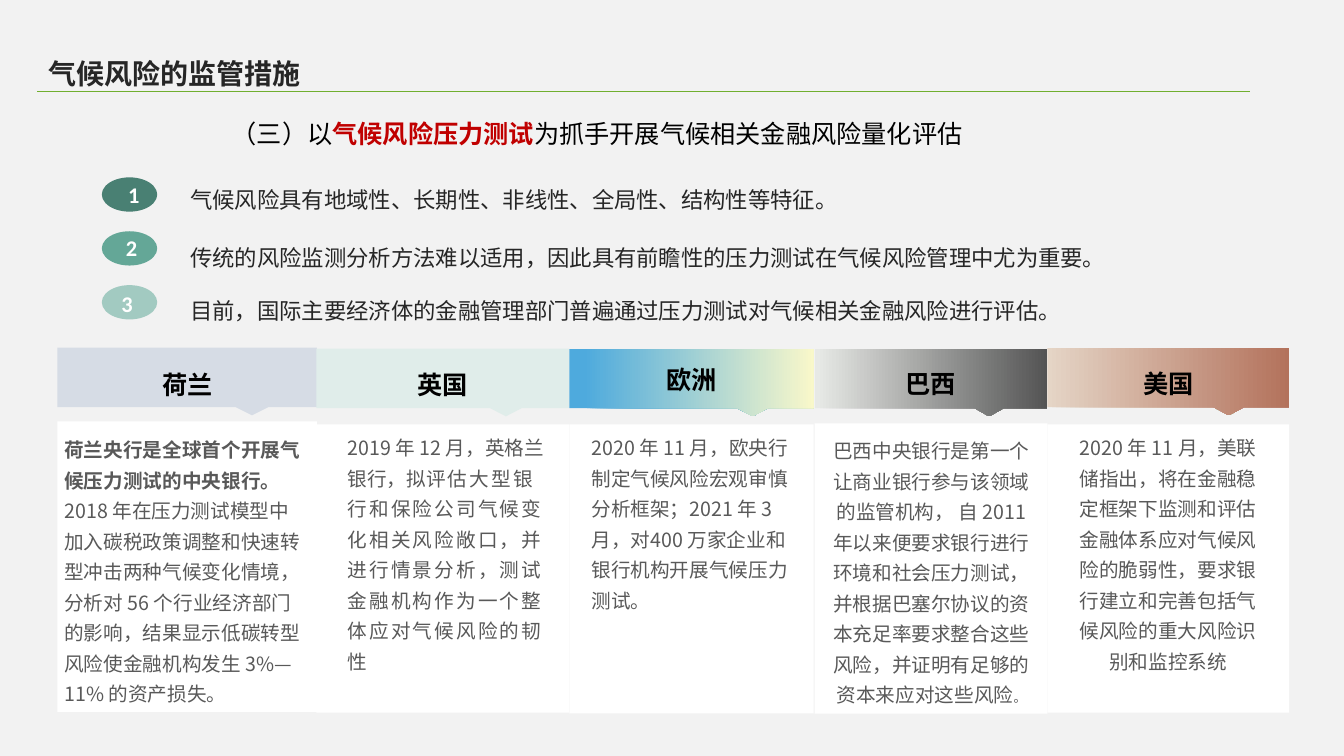
from dataclasses import dataclass

from lxml import etree
from pptx import Presentation
from pptx.dml.color import RGBColor
from pptx.enum.shapes import MSO_CONNECTOR, MSO_SHAPE
from pptx.enum.text import PP_ALIGN
from pptx.oxml.ns import qn
from pptx.util import Pt

LEFT, CENTER = PP_ALIGN.LEFT, PP_ALIGN.CENTER
OVAL, RECT = MSO_SHAPE.OVAL, MSO_SHAPE.RECTANGLE
STRAIGHT = MSO_CONNECTOR.STRAIGHT


@dataclass(frozen=True)
class Theme:
    cjk: str = "Noto Sans CJK JP"
    cjk_small: str = "Noto Sans CJK SC"
    latin: str = "Calibri"
    background: str = "F2F2F2"
    white: str = "FFFFFF"
    black: str = "000000"
    ink: str = "262626"
    body: str = "595959"
    accent: str = "C00000"
    rule: str = "71AF2F"
    title_size: int = 20
    heading_size: int = 18
    point_size: int = 16
    body_size: int = 14
    stop_size: int = 9


T = Theme()


def add_text(box, runs, size, color, align=LEFT, spacing=1.0, font=T.cjk, wrap=True):
    """Add a one-paragraph text box; runs are (text, overrides) pairs."""
    tf = s.shapes.add_textbox(*map(Pt, box)).text_frame
    tf.word_wrap = wrap
    p = tf.paragraphs[0]
    p.alignment = align
    if font == T.cjk:
        tf.margin_top = Pt(5.6)
        p.line_spacing = Pt(round(size * 1.2 * spacing, 1))
    p.font.name = font
    p.font.size = Pt(size)
    p.font.color.rgb = RGBColor.from_string(color)
    if all(style.get("bold") for _, style in runs):
        p.font.bold = True
    p_font = p._p.pPr.find(qn("a:defRPr"))
    etree.SubElement(p_font, qn("a:ea")).set("typeface", font)
    for text, style in runs:
        r = p.add_run()
        r.text = text
        r_pr = r._r.get_or_add_rPr()
        if "bold" in style and not p.font.bold:
            r.font.bold = style["bold"]
        if "color" in style:
            r.font.color.rgb = RGBColor.from_string(style["color"])
        if "size" in style:
            r.font.size = Pt(style["size"])
        if "tracking" in style:
            r_pr.set("spc", str(style["tracking"]))
        if "font" in style:
            r.font.name = style["font"]
            etree.SubElement(r_pr, qn("a:ea")).set("typeface", style["font"])


def paint(shape, colors, start=0):
    """Fill with one colour, or with a left-to-right gradient of two."""
    shape.shadow.inherit = False
    shape.line.fill.background()
    if len(colors) == 1:
        shape.fill.solid()
        shape.fill.fore_color.rgb = RGBColor.from_string(colors[0])
        return
    shape.fill.gradient()
    shape.fill.gradient_angle = 0
    for stop, color, position in zip(shape.fill.gradient_stops, colors, (start, 1)):
        stop.color.rgb = RGBColor.from_string(color)
        stop.position = position


prs = Presentation()
prs.slide_width, prs.slide_height = Pt(960), Pt(540)
s = prs.slides.add_slide(prs.slide_layouts[6])
s.background.fill.solid()
s.background.fill.fore_color.rgb = RGBColor.from_string(T.background)

# Title, rule and section heading
add_text((27.4, 34.6, 373, 31.7), [("气候风险的监管措施", {"bold": True})],
         T.title_size, T.ink)
rule = s.shapes.add_connector(STRAIGHT, Pt(26.6), Pt(65), Pt(892.8), Pt(65))
rule.line.color.rgb = RGBColor.from_string(T.rule)
rule.line.width = Pt(0.5)
etree.SubElement(rule._element.spPr, qn("a:effectLst"))
add_text((158.4, 79.2, 643, 28.8), [
    ("（三）以", {}),
    ("气候风险压力测试", {"bold": True, "color": T.accent}),
    ("为抓手开展气候相关金融风险量化评估", {}),
], T.heading_size, T.black)

# Numbered points: text, its top, badge colour, number box, number wraps
points = [
    ("气候风险具有地域性、长期性、非线性、全局性、结构性等特征。",
     121.7, "498073", (86.4, 126, 12.2, 26.6), True),
    ("传统的风险监测分析方法难以适用，因此具有前瞻性的压力测试在气候风险管理中尤为重要。",
     162.7, "64A797", (82.8, 163.4, 19.4, 25.9), False),
    ("目前，国际主要经济体的金融管理部门普遍通过压力测试对气候相关金融风险进行评估。",
     200.9, "A2CAC1", (79.2, 203.8, 23, 24.5), False),
]
for i, (text, top, color, number_box, wrap) in enumerate(points):
    add_text((128.9, top, 718, 23), [(text, {})], T.point_size, T.ink, spacing=1.3)
    badge = s.shapes.add_shape(OVAL, Pt(72.7), Pt(126.7 + 38.5 * i), Pt(39.6), Pt(24.5))
    paint(badge, [color])
    add_text(number_box, [(str(i + 1), {"bold": True})], T.point_size, T.white,
             CENTER, font=T.latin, wrap=wrap)

# Country columns: name, left, width, header top, panel top and height,
# header colours, gradient start, name box, body box, body alignment, body runs
countries = [
    ("荷兰", 41, 185.4, 248.4, 301, 207.4, ["D6DCE5"], 0,
     (75.6, 258.5, 116.6, 28.8), (38.9, 302.4, 188.6, 205.2), LEFT, [
         ("荷兰央行是全球首个开展气候压力测试的中央银行。", {"bold": True}),
         ("2018 年在压力测试模型中加入碳税政策调整和快速转型冲击两种气候变化情境，"
          "分析对 56 个行业经济部门的影响，结果显示低碳转型风险使金融机构发生 "
          "3%—11% 的资产损失。", {})]),
    ("英国", 226.1, 180.4, 249.1, 303.1, 206, ["E0EDEA"], 0,
     (259.9, 258.5, 113, 28.8), (241.2, 301, 160.6, 205.2), LEFT, [
         ("2019 年 12 月，英格兰银行，拟", {}),
         ("评估大型银行和保险公司气候变化相关风险敞口，并进行情景分析，"
          "测试金融机构作为一个整体应对气候风险的韧性", {"tracking": 150})]),
    ("欧洲", 406.8, 174.4, 249.1, 303.1, 206.6, ["4EAADD", "F9F8CA"], 0.06,
     (439.2, 254.9, 109.4, 28.8), (415.4, 301, 157.7, 139), LEFT, [
         ("2020 年 11 月，欧央行制定气候风险宏观审慎分析框架；2021 年 3 月，"
          "对400 万家企业和银行机构开展气候压力测试。", {})]),
    ("巴西", 581.8, 166.3, 249.1, 302.4, 207.4, ["E7E9E6", "545454"], 0.01,
     (612.7, 257.8, 104.4, 28.8), (586.8, 303.1, 157, 205.2), CENTER, [
         ("巴西中央银行是第一个让商业银行参与该领域的监管机构， 自 2011 "
          "年以来便要求银行进行环境和社会压力测试，并根据巴塞尔协议的资本充足率"
          "要求整合这些风险，并证明有足够的资本来应对这些风险", {}),
         ("。", {"size": T.stop_size, "font": T.cjk_small})]),
    ("美国", 748.1, 172.8, 248.4, 303.1, 206, ["E5D5C6", "B3725C"], 0,
     (754.6, 257.8, 160.6, 28.8), (757.4, 301, 154.1, 183.6), CENTER, [
         ("2020 年 11 月，美联储指出，将在金融稳定框架下监测和评估金融体系应对"
          "气候风险的脆弱性，要求银行建立和完善包括气候风险的重大风险识别和监控系统",
          {})]),
]
for (name, left, width, top, panel_top, panel_height, colors, start,
     name_box, body_box, align, runs) in countries:
    panel = s.shapes.add_shape(RECT, Pt(left), Pt(panel_top), Pt(width), Pt(panel_height))
    paint(panel, [T.white])

    right, bottom = left + width, top + 42.5
    tip, half = left + 0.75 * width, width / 16
    outline = [(left, bottom), (tip - half, bottom), (tip, bottom + 5.8),
               (tip + half, bottom), (right, bottom), (right, top)]
    builder = s.shapes.build_freeform(Pt(left), Pt(top))
    builder.add_line_segments([(Pt(x), Pt(y)) for x, y in outline], close=True)
    paint(builder.convert_to_shape(), colors, start)

    add_text(body_box, runs, T.body_size, T.body, align, spacing=1.3)
    add_text(name_box, [(name, {"bold": True})], T.heading_size, T.black, CENTER)

prs.save("out.pptx")
